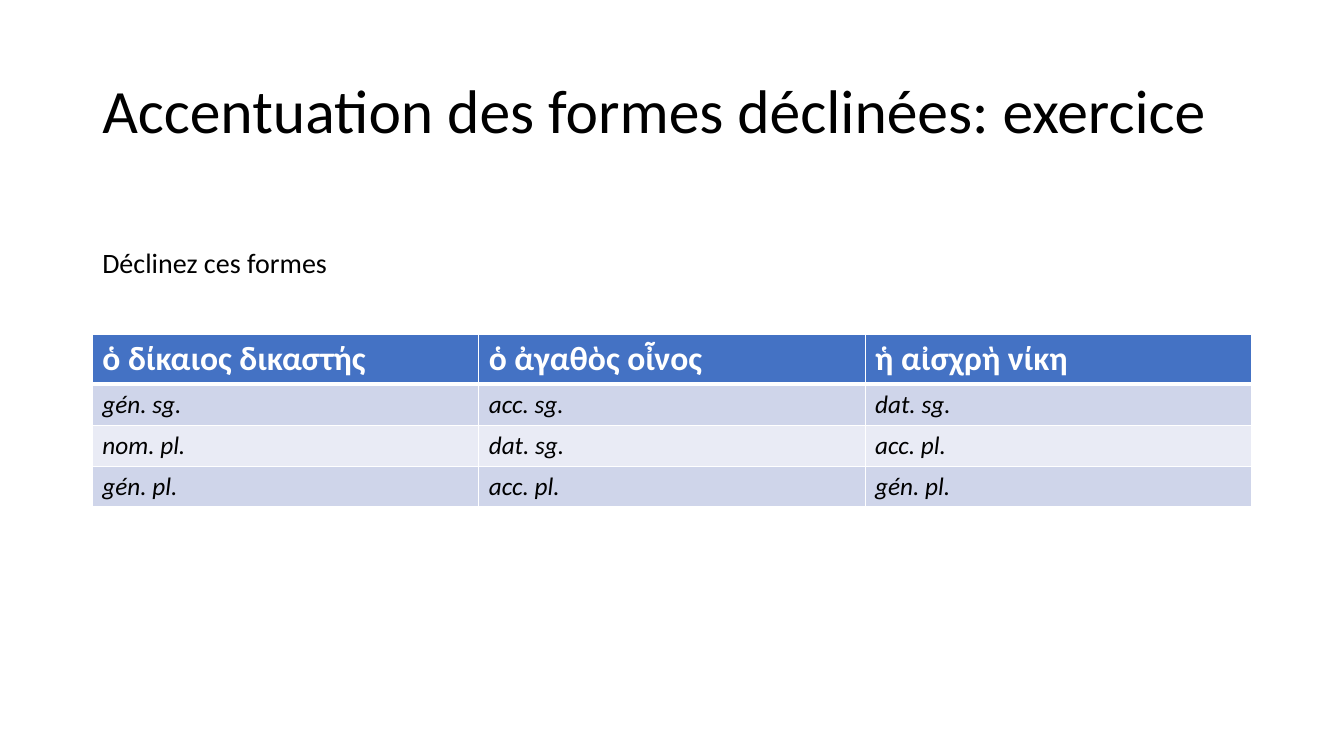
from lxml import etree
from pptx import Presentation
from pptx import util as u
from pptx.dml import color
from pptx.enum import text
from pptx.oxml import ns

FONT = "Calibri"
LEFT, WIDTH = 66, 828
HEADER_HEIGHT, ROW_HEIGHT = 36, 29.2
HEADER_FILL = "4472C4"
BAND_FILLS = ["CFD5EA", "E9EBF5"]
DECLENSIONS = [
    ["ὁ δίκαιος δικαστής", "ὁ ἀγαθὸς οἶνος", "ἡ αἰσχρὴ νίκη"],
    ["gén. sg.", "acc. sg.", "dat. sg."],
    ["nom. pl.", "dat. sg.", "acc. pl."],
    ["gén. pl.", "acc. pl.", "gén. pl."],
]


def rgb(value):
    """Turn a hex string into a colour."""
    return color.RGBColor.from_string(value)


def add_run(paragraph, wording, size, colour="000000", bold=False, italic=False):
    """Add one formatted run to a paragraph."""
    run = paragraph.add_run()
    run.text = wording
    run.font.name = FONT
    run.font.size = u.Pt(size)
    run.font.bold = bold
    run.font.italic = italic
    run.font.color.rgb = rgb(colour)


def add_text(slide, box, wording, size, anchor=text.MSO_ANCHOR.TOP, spacing=1.0):
    """Add a wrapped text box with a single paragraph."""
    shape = slide.shapes.add_textbox(*[u.Pt(length) for length in box])
    frame = shape.text_frame
    frame.word_wrap = True
    frame.vertical_anchor = anchor
    paragraph = frame.paragraphs[0]
    paragraph.line_spacing = spacing
    add_run(paragraph, wording, size)


def set_borders(cell, top, bottom):
    """Give a cell white borders, with its own top and bottom widths."""
    properties = cell._tc.get_or_add_tcPr()
    for side, width in (("L", 1), ("R", 1), ("T", top), ("B", bottom)):
        line = etree.SubElement(properties, ns.qn(f"a:ln{side}"), w=str(u.Pt(width)))
        fill = etree.SubElement(line, ns.qn("a:solidFill"))
        etree.SubElement(fill, ns.qn("a:srgbClr"), val="FFFFFF")


def add_declension_table(slide, top):
    """Add the exercise table with a header and banded rows."""
    row_count, column_count = len(DECLENSIONS), len(DECLENSIONS[0])
    height = HEADER_HEIGHT + ROW_HEIGHT * (row_count - 1)
    table = slide.shapes.add_table(
        row_count, column_count, u.Pt(LEFT), u.Pt(top), u.Pt(WIDTH), u.Pt(height)
    ).table
    for row, forms in enumerate(DECLENSIONS):
        header = row == 0
        table.rows[row].height = u.Pt(HEADER_HEIGHT if header else ROW_HEIGHT)
        for column, form in enumerate(forms):
            cell = table.cell(row, column)
            set_borders(cell, top=3 if row == 1 else 1, bottom=3 if header else 1)
            cell.fill.solid()
            cell.fill.fore_color.rgb = rgb(HEADER_FILL if header else BAND_FILLS[(row - 1) % 2])
            paragraph = cell.text_frame.paragraphs[0]
            if header:
                add_run(paragraph, form, 24, "FFFFFF", bold=True)
            else:
                add_run(paragraph, form, 18, italic=True)


def main():
    """Build the slide and save it."""
    presentation = Presentation()
    presentation.slide_width, presentation.slide_height = u.Pt(960), u.Pt(540)
    slide = presentation.slides.add_slide(presentation.slide_layouts[6])
    add_text(slide, (LEFT, 28.75, WIDTH, 104.4), "Accentuation des formes déclinées: exercice",
             44, text.MSO_ANCHOR.MIDDLE, 0.9)
    add_declension_table(slide, 238.5)
    add_text(slide, (LEFT, 171.5, 207.5, 31.5), "Déclinez ces formes", 20)
    presentation.save("out.pptx")


if __name__ == "__main__":
    main()
